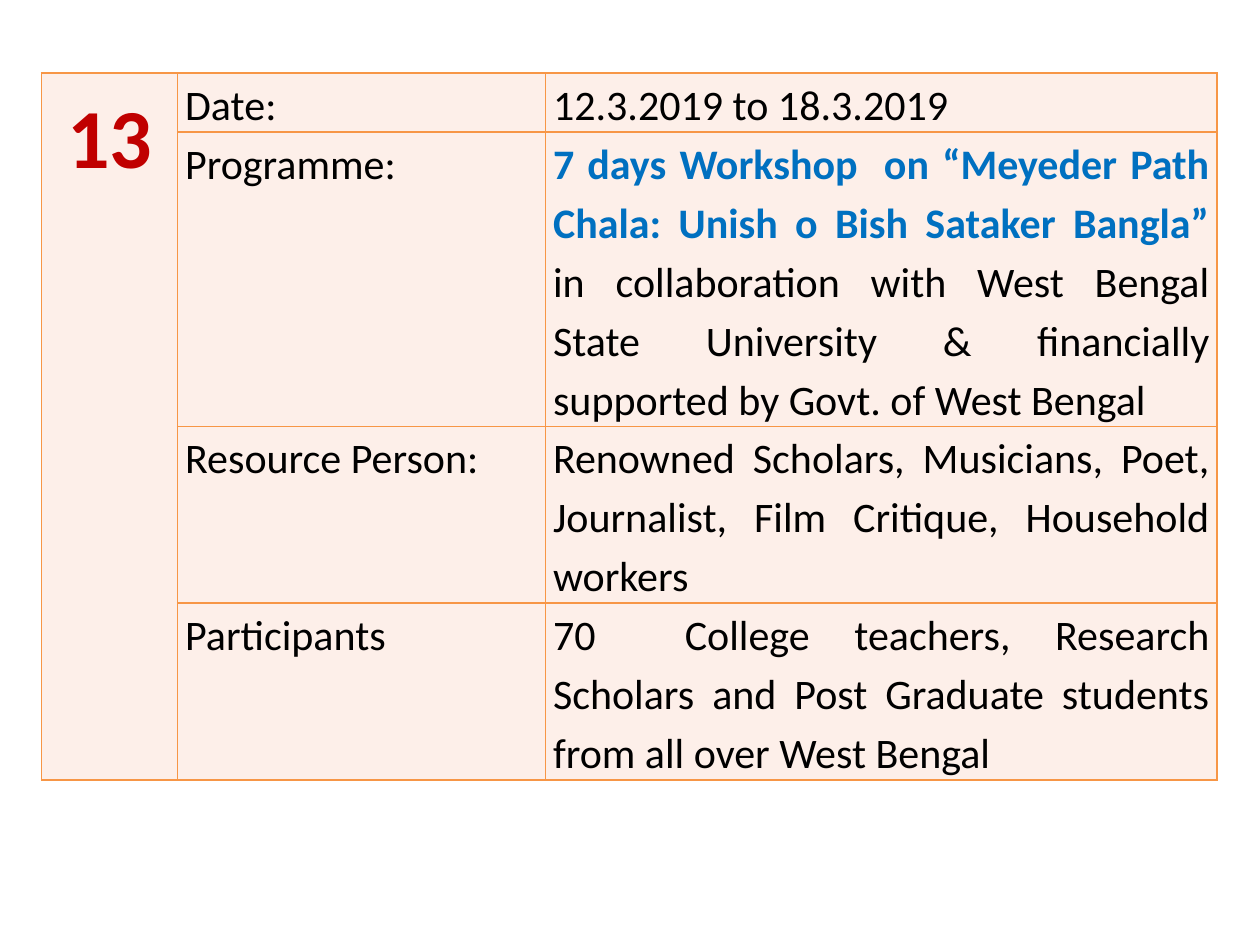
from dataclasses import dataclass

from lxml.etree import SubElement
from pptx import Presentation
from pptx.dml.color import RGBColor as Color
from pptx.enum.text import MSO_ANCHOR as Anchor, PP_ALIGN as Align
from pptx.oxml.ns import qn
from pptx.util import Inches, Pt


@dataclass(frozen=True)
class Theme:
    font: str = "Calibri"
    body_size: int = 24
    number_size: int = 48
    line_spacing: float = 1.15
    text: str = "000000"
    number: str = "C00000"
    title: str = "0070C0"
    fill: str = "FDEFE9"
    border: str = "F79646"
    border_width: int = 1
    side_margin: float = 0.06


class SlideBuilder:
    def __init__(self, page, theme):
        self.page = page
        self.theme = theme

    def add_grid(self, left, top, widths, heights):
        frame = self.page.shapes.add_table(
            len(heights), len(widths), Inches(left), Inches(top),
            Inches(sum(widths)), Inches(sum(heights)))
        table = frame.table
        table.first_row = table.horz_banding = False
        for column, width in zip(table.columns, widths):
            column.width = Inches(width)
        for row, height in zip(table.rows, heights):
            row.height = Inches(height)
        for cell in table.iter_cells():
            self.style_cell(cell)
        return table

    def style_cell(self, cell):
        theme = self.theme
        cell.margin_left = cell.margin_right = Inches(theme.side_margin)
        cell.margin_top = cell.margin_bottom = 0
        cell.vertical_anchor = Anchor.TOP
        # Borders come before the fill in the cell properties
        properties = cell._tc.get_or_add_tcPr()
        for side in ("a:lnL", "a:lnR", "a:lnT", "a:lnB"):
            line = SubElement(properties, qn(side), w=str(Pt(theme.border_width)))
            solid = SubElement(line, qn("a:solidFill"))
            SubElement(solid, qn("a:srgbClr"), val=theme.border)
        cell.fill.solid()
        cell.fill.fore_color.rgb = Color.from_string(theme.fill)

    def add_text(self, cell, spans, size, align=Align.JUSTIFY):
        para = cell.text_frame.paragraphs[0]
        para.alignment = align
        para.line_spacing = self.theme.line_spacing
        for text, color, bold in spans:
            span = para.add_run()
            span.text = text
            span.font.name = self.theme.font
            span.font.size = Pt(size)
            span.font.bold = bold
            span.font.color.rgb = Color.from_string(color)


def main():
    theme = Theme()
    deck = Presentation()
    deck.slide_width, deck.slide_height = Inches(10), Inches(7.5)
    builder = SlideBuilder(deck.slides.add_slide(deck.slide_layouts[6]), theme)

    # Programme details: label and its value
    def plain(text):
        return text, theme.text, False

    details = [
        ("Date:", [plain("12.3.2019 to 18.3.2019")]),
        ("Programme:", [
            ("7 days Workshop  on “Meyeder Path Chala: Unish o Bish Sataker Bangla” ",
             theme.title, True),
            plain("in collaboration with West Bengal State University & "
                  "financially supported by Govt. of West Bengal")]),
        ("Resource Person:", [
            plain("Renowned Scholars, Musicians, Poet, Journalist, "
                  "Film Critique, Household workers ")]),
        ("Participants", [
            plain("70  College teachers, Research Scholars and "
                  "Post Graduate students from all over West Bengal")]),
    ]
    table = builder.add_grid(0.33, 0.58, widths=(1.08, 2.92, 5.33),
                             heights=(0.46, 2.3, 1.38, 1.38))

    # Serial number beside all rows
    number_cell = table.cell(0, 0)
    number_cell.merge(table.cell(len(details) - 1, 0))
    builder.add_text(number_cell, [("13", theme.number, True)],
                     theme.number_size, Align.CENTER)

    for row, (label, value) in enumerate(details):
        builder.add_text(table.cell(row, 1), [plain(label)], theme.body_size)
        builder.add_text(table.cell(row, 2), value, theme.body_size)

    deck.save("out.pptx")


if __name__ == "__main__":
    main()
